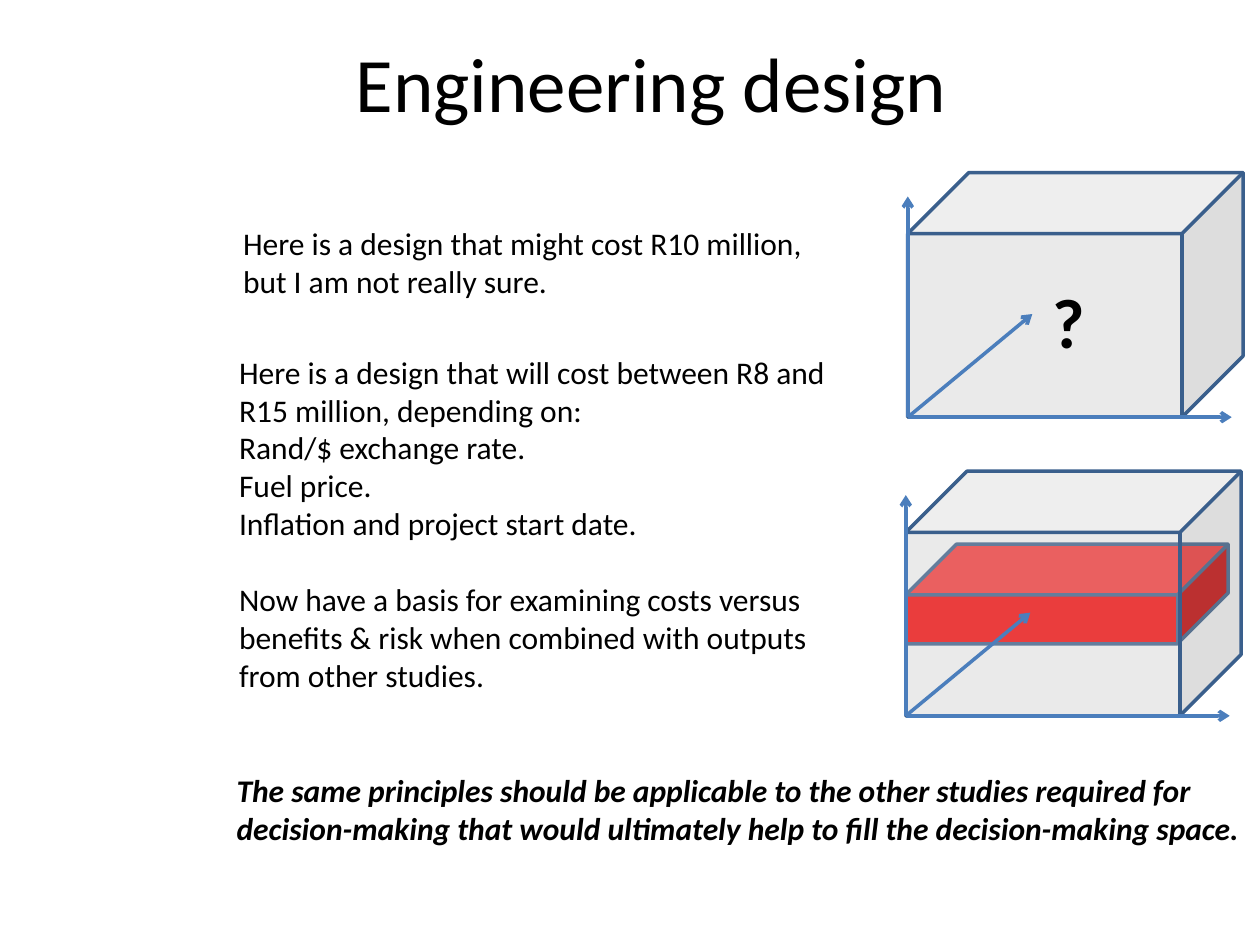
from lxml import etree
from pptx import Presentation
from pptx.dml.color import RGBColor
from pptx.enum import shapes, text
from pptx.oxml.ns import qn
from pptx.util import Cm, Pt

BLACK = RGBColor(0x00, 0x00, 0x00)
GREY = RGBColor(0xBF, 0xBF, 0xBF)
RED = RGBColor(0xFF, 0x00, 0x00)
EDGE = RGBColor(0x3A, 0x5F, 0x8C)
AXIS = RGBColor(0x4B, 0x7E, 0xBC)
FONT = "Calibri"
LINE_WIDTH = Pt(2)
SPACE_WIDTH, SPACE_HEIGHT = 6.76, 4.93  # decision space, cm
BODY_WIDTH = 12.6

COST_RANGE = [
    "Here is a design that will cost between R8 and R15 million, depending on:",
    "Rand/$ exchange rate.",
    "Fuel price.",
    "Inflation and project start date.",
    "Now have a basis for examining costs versus benefits & risk when combined "
    "with outputs from other studies.",
]


def style(paragraph, size, bold=False, italic=False):
    font = paragraph.font
    font.name, font.size = FONT, Pt(size)
    font.bold, font.italic = bold, italic
    font.color.rgb = BLACK


def add_title(slide, left, top, width, height):
    title = slide.shapes.title
    title.left, title.top, title.width, title.height = map(Cm, (left, top, width, height))
    frame = title.text_frame
    frame.text = "Engineering design"
    frame.vertical_anchor = text.MSO_ANCHOR.MIDDLE
    frame.paragraphs[0].alignment = text.PP_ALIGN.CENTER
    style(frame.paragraphs[0], 44)


def add_note(slide, left, top, width, height, lines, size=18, wrap=True, **look):
    box = slide.shapes.add_textbox(Cm(left), Cm(top), Cm(width), Cm(height))
    frame = box.text_frame
    frame.word_wrap = wrap
    frame.text = "\n".join(lines)
    for paragraph in frame.paragraphs:
        style(paragraph, size, **look)
    return frame


def add_cube(group, left, top, width, height, depth, color, alpha=None):
    cube = group.shapes.add_shape(
        shapes.MSO_SHAPE.CUBE, Cm(left), Cm(top), Cm(width), Cm(height))
    cube.adjustments[0] = depth
    cube.shadow.inherit = False
    cube.fill.solid()
    cube.fill.fore_color.rgb = color
    if alpha is not None:
        srgb = cube.fill._xPr.find(".//" + qn("a:srgbClr"))
        etree.SubElement(srgb, qn("a:alpha"), val=str(alpha * 1000))
    cube.line.color.rgb = EDGE
    cube.line.width = LINE_WIDTH


def add_axis(group, x, y, dx, dy):
    axis = group.shapes.add_connector(
        shapes.MSO_CONNECTOR.STRAIGHT, Cm(x), Cm(y), Cm(x + dx), Cm(y + dy))
    axis.line.color.rgb = AXIS
    axis.line.width = LINE_WIDTH
    etree.SubElement(axis.line._get_or_add_ln(), qn("a:tailEnd"), type="arrow")
    etree.SubElement(axis._element.spPr, qn("a:effectLst"))


def add_decision_space(slide, left, top, with_band=False):
    group = slide.shapes.add_group_shape()
    # Known cost range inside the space
    if with_band:
        add_cube(group, left, top + 1.47, 6.5, 2.01, 0.51, RED)
    add_cube(group, left, top, SPACE_WIDTH, SPACE_HEIGHT, 0.25, GREY, alpha=32)
    # Depth, horizontal and vertical axes from the front lower corner
    for dx, dy in ((2.51, -2.08), (6.53, 0), (0, -4.45)):
        add_axis(group, left, top + SPACE_HEIGHT, dx, dy)


def main():
    prs = Presentation()
    prs.slide_width, prs.slide_height = Cm(25.4), Cm(19.05)
    slide = prs.slides.add_slide(prs.slide_layouts[5])

    add_title(slide, 1.7, 0.46, 22.86, 2.36)

    # Uncertain design
    add_note(slide, 4.65, 4.39, BODY_WIDTH, 1.8,
             ["Here is a design that might cost R10 million, but I am not really sure."])
    add_decision_space(slide, 18.3, 3.48)

    # Design with a cost range
    add_decision_space(slide, 18.26, 9.5, with_band=True)
    add_note(slide, 20.96, 5.49, 1.17, 1.96, ["?"], size=40, wrap=False, bold=True)
    cost_range = add_note(slide, 4.57, 6.99, BODY_WIDTH, 7.19, COST_RANGE)
    cost_range.paragraphs[-1].space_before = Pt(22)

    # Conclusion
    add_note(slide, 4.52, 15.42, 21.67, 1.8,
             ["The same principles should be applicable to the other studies required for "
              "decision-making that would ultimately help to fill the decision-making space."],
             bold=True, italic=True)

    prs.save("out.pptx")


if __name__ == "__main__":
    main()
